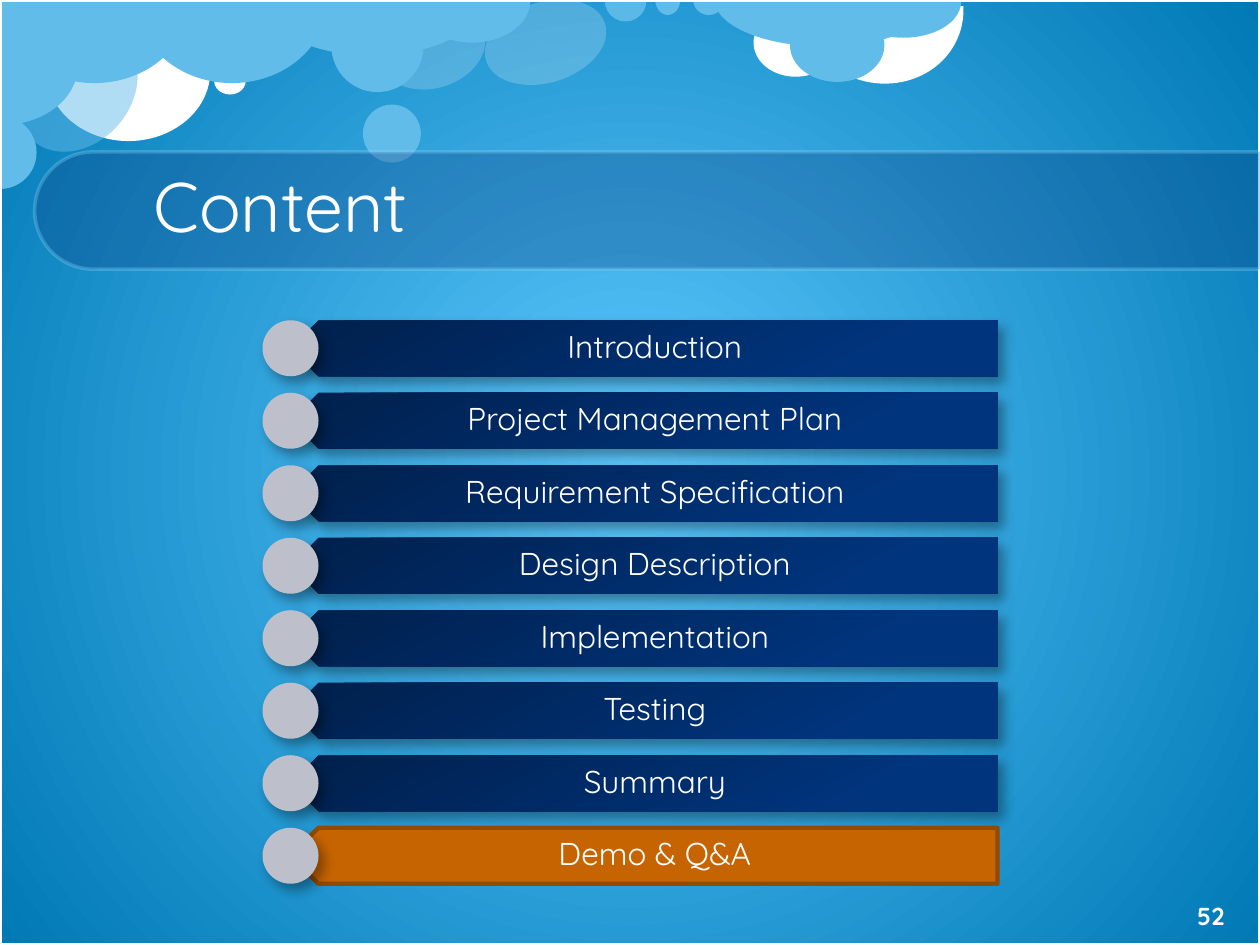
from lxml.etree import SubElement
from pptx import Presentation
from pptx.dml.color import RGBColor
from pptx.enum.shapes import MSO_SHAPE
from pptx.enum.text import MSO_ANCHOR, PP_ALIGN
from pptx.oxml.ns import qn
from pptx.util import Pt

FONT = "Quicksand"
WHITE = "FFFFFF"
SKY = "62BCE9"
PALE = "8FD9FB"
SECTIONS = ["Introduction", "Project Management Plan", "Requirement Specification",
            "Design Description", "Implementation", "Testing", "Summary", "Demo & Q&A"]
CURRENT_SECTION = "Demo & Q&A"

OVAL, PIE, ARC = MSO_SHAPE.OVAL, MSO_SHAPE.PIE, MSO_SHAPE.ARC
HALF = (0, 108)
CLOUDS = [
    (OVAL, 223.9, -3.6, 46.1, 61.9, WHITE, 20, 72.8, ()),
    (OVAL, 26.6, 0.7, 93.6, 79.9, WHITE, 100, 0, ()),
    (ARC, 460.1, -43.2, 87.1, 94.3, WHITE, 100, 106.5, (151.8, 44.48)),
    (OVAL, 430.6, 5, 48.2, 38.9, WHITE, 100, 0, ()),
    (PIE, -0.7, -47.5, 109.4, 95, SKY, 100, 0, HALF),
    (PIE, 149.8, -31.7, 126, 63.4, SKY, 100, 0, HALF),
    (OVAL, 207.4, 59.8, 33.1, 33.1, SKY, 100, 0, ()),
    (OVAL, 13.7, 13, 61.2, 77, SKY, 50, 41.8, ()),
    (PIE, -20.9, 66.2, 41.8, 41.8, SKY, 100, 270, HALF),
    (OVAL, 122.4, 38.9, 18, 15.1, WHITE, 100, 0, ()),
    (PIE, 77.8, -47.5, 109.4, 95, SKY, 100, 0, HALF),
    (PIE, 408.2, -27.4, 126, 54, SKY, 100, 0, HALF),
    (OVAL, 451.4, 5, 54, 41.8, SKY, 100, 0, ()),
    (PIE, 483.1, -20.2, 66.2, 41.8, SKY, 100, 0, HALF),
    (OVAL, 288.7, -11.5, 46.1, 71.3, WHITE, 20, 72.8, ()),
    (PIE, 345.6, -11.5, 23.8, 23.8, PALE, 50, 0, HALF),
    (PIE, 374.4, -9.4, 14.4, 18, SKY, 100, 0, HALF),
    (PIE, 396, -9.4, 18, 18, SKY, 100, 0, HALF),
    (OVAL, 189.4, 0, 52.6, 52.6, SKY, 100, 0, ()),
    (PIE, 236.9, -23.8, 66.2, 48.2, SKY, 100, 0, HALF),
    (PIE, -33.8, -6.5, 67, 89.3, SKY, 100, 270, HALF),
]


def color(value):
    return RGBColor.from_string(value)


def set_opacity(solid_fill, percent):
    if percent < 100:
        SubElement(solid_fill[0], qn("a:alpha"), val=str(percent * 1000))


def set_gradient(fill, properties, stops):
    fill.gradient()
    gradient = properties.find(qn("a:gradFill"))
    gradient.set("rotWithShape", "1")
    for child in list(gradient):
        gradient.remove(child)
    stop_list = SubElement(gradient, qn("a:gsLst"))
    for position, value in stops:
        stop = SubElement(stop_list, qn("a:gs"), pos=str(position * 1000))
        SubElement(stop, qn("a:srgbClr"), val=value)
    return gradient


def add_shape(slide, preset, left, top, width, height, fill=None, opacity=100, rotation=0):
    shape = slide.shapes.add_shape(preset, Pt(left), Pt(top), Pt(width), Pt(height))
    shape.shadow.inherit = False
    shape.rotation = rotation
    shape.line.fill.background()
    if fill:
        shape.fill.solid()
        shape.fill.fore_color.rgb = color(fill)
        set_opacity(shape.element.spPr.find(qn("a:solidFill")), opacity)
    else:
        shape.fill.background()
    return shape


def set_line(shape, value, width, opacity=100):
    shape.line.color.rgb = color(value)
    shape.line.width = Pt(width)
    set_opacity(shape.element.spPr.find(qn("a:ln")).find(qn("a:solidFill")), opacity)


def add_shadow(shape):
    effects = shape.element.spPr.find(qn("a:effectLst"))
    shadow = SubElement(effects, qn("a:outerShdw"), blurRad=str(Pt(7)), dist=str(Pt(5)),
                        dir=str(50 * 60000), algn="tl", rotWithShape="0")
    SubElement(SubElement(shadow, qn("a:srgbClr"), val="000000"), qn("a:alpha"), val="35000")


def add_text(slide, text, left, top, width, height, size, alignment=PP_ALIGN.CENTER,
             bold=False, spacing=None, insets=(7.2, 3.6, 7.2, 3.6)):
    box = slide.shapes.add_textbox(Pt(left), Pt(top), Pt(width), Pt(height))
    frame = box.text_frame
    frame.word_wrap = True
    frame.vertical_anchor = MSO_ANCHOR.MIDDLE
    frame.margin_left, frame.margin_top, frame.margin_right, frame.margin_bottom = map(Pt, insets)
    paragraph = frame.paragraphs[0]
    paragraph.text = text
    paragraph.alignment = alignment
    paragraph.line_spacing = spacing
    paragraph.font.name = FONT
    paragraph.font.size = Pt(size)
    paragraph.font.bold = bold
    paragraph.font.color.rgb = color(WHITE)


def set_background(slide):
    fill = slide.background.fill
    fill.solid()
    properties = slide.element.find(".//" + qn("p:bgPr"))
    gradient = set_gradient(fill, properties, [(0, "5DC9FF"), (100, "0079B5")])
    circle = SubElement(gradient, qn("a:path"), path="circle")
    SubElement(circle, qn("a:fillToRect"), l="50000", t="50000", r="50000", b="50000")


def add_clouds(slide, left, top):
    for preset, x, y, width, height, fill, opacity, rotation, adjustments in CLOUDS:
        cloud = add_shape(slide, preset, left + x, top + y, width, height, fill, opacity, rotation)
        for index, value in enumerate(adjustments):
            cloud.adjustments[index] = value


def add_title_bar(slide, title, left, top, width, height):
    bar = add_shape(slide, MSO_SHAPE.ROUND_2_SAME_RECTANGLE, left + (width - height) / 2,
                    top + (height - width) / 2, height, width, "073779", 30, 270)
    bar.adjustments[0] = 0.5
    bar.adjustments[1] = 0
    set_line(bar, PALE, 2, 30)
    add_text(slide, title, left + 60.8, top - 1.8, 583, 56, 40, PP_ALIGN.LEFT, spacing=Pt(56))


def add_section(slide, name, left, top, width, height):
    plate = add_shape(slide, MSO_SHAPE.PENTAGON, left + height / 2, top, width - height / 2,
                      height, "C76402", rotation=180)
    if name == CURRENT_SECTION:
        set_line(plate, "934A01", 2.5)
    else:
        gradient = set_gradient(plate.fill, plate.element.spPr,
                                [(0, "00204C"), (80, "00347C"), (100, "00347D")])
        SubElement(gradient, qn("a:lin"), ang=str(240 * 60000), scaled="0")
        add_shadow(plate)
    add_text(slide, name, left + 24, top, width - 24, height, 18, spacing=0.9,
             insets=(14.4, 5, 10, 5))
    add_shadow(add_shape(slide, OVAL, left, top, height, height, "BDBFCB"))


def add_sections(slide, left, top, width, height):
    row_height = 32
    pitch = (height - row_height) / (len(SECTIONS) - 1)
    for index, name in enumerate(SECTIONS):
        add_section(slide, name, left, top + index * pitch, width, row_height)


def main():
    presentation = Presentation()
    presentation.slide_width, presentation.slide_height = Pt(720), Pt(540)
    slide = presentation.slides.add_slide(presentation.slide_layouts[6])
    set_background(slide)
    add_clouds(slide, 0, 0)
    set_line(add_shape(slide, MSO_SHAPE.RECTANGLE, 0, 0, 720, 540), WHITE, 2)
    add_title_bar(slide, "Content", 19.8, 86.8, 700, 67)
    add_sections(slide, 150, 183, 420, 322)
    add_text(slide, "52", 664, 507.6, 56, 31, 14, bold=True)
    presentation.save("out.pptx")


if __name__ == "__main__":
    main()
